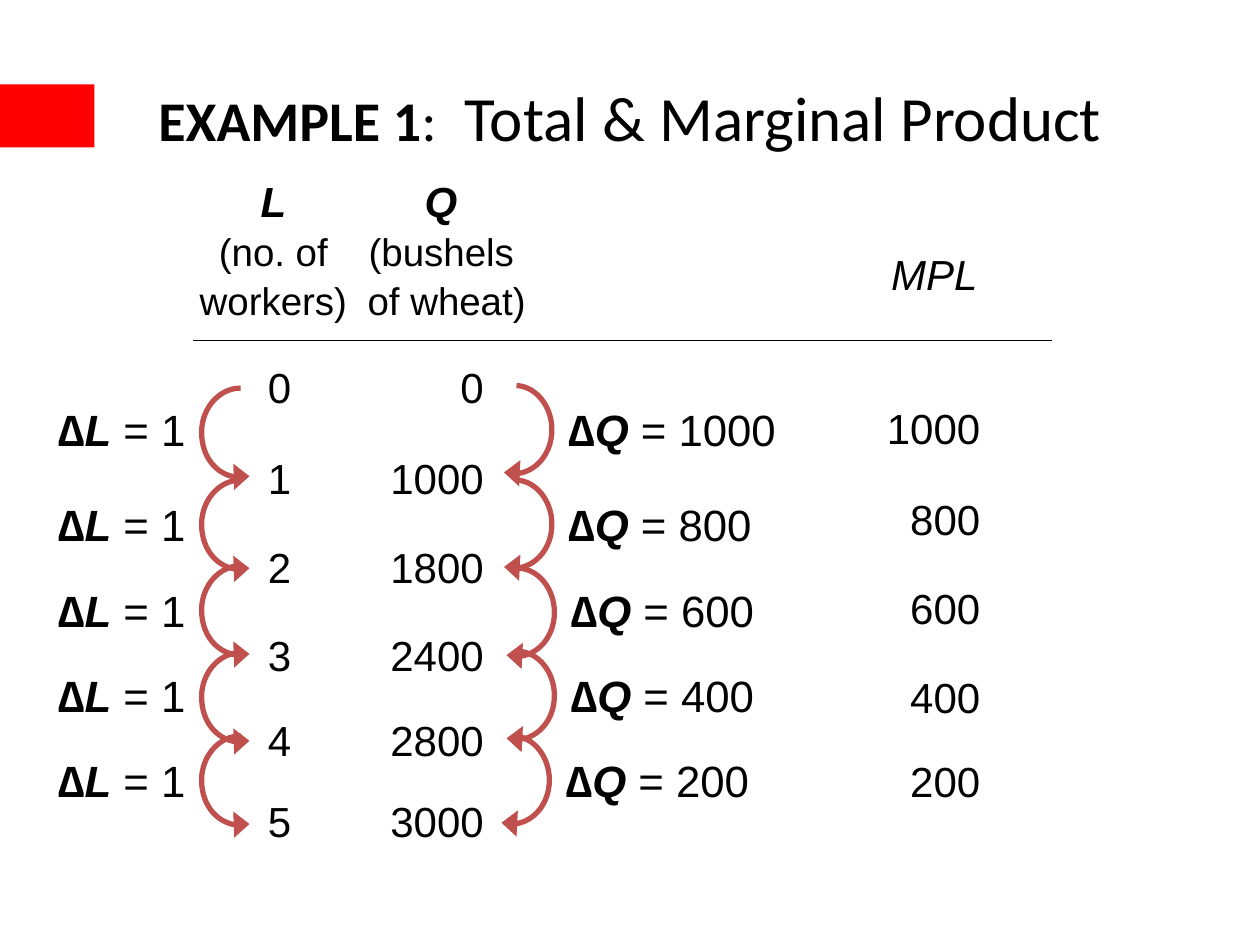
from lxml.etree import SubElement
from pptx import Presentation
from pptx.dml.color import RGBColor
from pptx.enum.shapes import MSO_CONNECTOR, MSO_SHAPE
from pptx.enum.text import MSO_ANCHOR, PP_ALIGN as ALIGN
from pptx.oxml.ns import qn
from pptx.util import Inches, Pt

BLACK, RED, BRICK = "000000", "FF0000", "C0504D"

TITLE = [("EXAMPLE 1", {"size": 32, "bold": True}),
         (":", {"size": 32, "tracking": 8}),
         (" Total & Marginal Product", {"size": 36})]
SYMBOL = {"bold": True, "italic": True}
SMALL = {"size": 22}
HEADERS = [  # runs, left, top, width
    ([("L", SYMBOL), ("\n", {}), ("(no. of workers)", SMALL)], 1.52, 1.25, 1.3),
    ([("Q ", SYMBOL), ("\n", {}), ("(bushels ", SMALL), ("\n", {}),
      ("of wheat)", SMALL)], 2.82, 1.25, 1.45),
    ([("MPL", {"italic": True})], 6.91, 1.44, 1.01),
]
HEADER_HEIGHT = 1.44
WORKERS = [0, 1, 2, 3, 4, 5]
OUTPUT = [0, 1000, 1800, 2400, 2800, 3000]
MARGINAL = [after - before for before, after in zip(OUTPUT, OUTPUT[1:])]

ROW_EDGES = [2.68, 3.43, 4.13, 4.84, 5.54, 6.18, 6.82]
MARGINAL_DROP = 0.33            # marginal values sit between two rows
STEPS = [  # label top, left arc top, right arc top, right arc left
    (3.15, 3.08, 3.06, 4), (3.9, 3.81, 3.81, 4), (4.58, 4.49, 4.51, 4.02),
    (5.26, 5.18, 5.17, 4.02), (5.93, 5.84, 5.84, 3.98)]
LEFT_ARC_X = 1.6
RULES = [(1.53, 4.2, 2.7), (1.88, 8.35, 2.7)]

# Arc start, then curves of two control points and an end, from the top left
LEFT_ARC = [(0.31, 0),
            [(0.14, 0), (0, 0.16), (0, 0.35)],
            [(0, 0.55), (0.14, 0.71), (0.31, 0.71)],
            [(0.33, 0.71), (0.35, 0.7), (0.38, 0.7)]]
RIGHT_ARC = [(0.1, 0),
             [(0.26, 0.01), (0.38, 0.17), (0.38, 0.35)],
             [(0.38, 0.54), (0.24, 0.7), (0.08, 0.7)],
             [(0.05, 0.7), (0.03, 0.7), (0, 0.69)]]


def color(hex_text):
    return RGBColor.from_string(hex_text)


def write(para, runs, size=24, font="Arial"):
    """Fill a paragraph with (text, format) runs; a newline is a line break."""
    for text, style in runs:
        if text == "\n":
            para.add_line_break()
            continue
        span = para.add_run()
        span.text = text
        span.font.name = font
        span.font.size = Pt(style.get("size", size))
        span.font.bold = style.get("bold", False)
        span.font.italic = style.get("italic", False)
        span.font.color.rgb = color(BLACK)
        if "tracking" in style:
            span.font._element.set("spc", str(style["tracking"] * 100))


def add_text(slide, runs, left, top, width, height, align=ALIGN.LEFT, size=24,
             inset=(0.1, 0.1), anchor=MSO_ANCHOR.MIDDLE, spacing=None, wrap=True):
    box = slide.shapes.add_textbox(*map(Inches, (left, top, width, height)))
    frame = box.text_frame
    frame.word_wrap = wrap
    frame.vertical_anchor = anchor
    frame.margin_left, frame.margin_right = map(Inches, inset)
    para = frame.paragraphs[0]
    para.alignment = align
    para.line_spacing = spacing
    write(para, runs, size)


def add_rule(slide, start, end, y):
    rule = slide.shapes.add_connector(
        MSO_CONNECTOR.STRAIGHT, Inches(start), Inches(y), Inches(end), Inches(y))
    rule.line.color.rgb = color(BLACK)
    rule.line.width = Pt(0.75)
    SubElement(rule._element.spPr, qn("a:effectLst"))


def add_arc_arrow(slide, arc_points, left, top):
    """Build the arc from its end points, then bend each segment into a curve."""
    start, *curves = arc_points
    corners = [(Inches(left + x), Inches(top + y))
               for x, y in [start] + [curve[-1] for curve in curves]]
    builder = slide.shapes.build_freeform(*corners[0])
    builder.add_line_segments(corners[1:], close=False)
    arc = builder.convert_to_shape()
    segments = list(arc._element.iter(qn("a:lnTo")))
    for segment, curve in zip(segments, curves):
        segment.tag = qn("a:cubicBezTo")
        segment.clear()
        for x, y in curve:
            SubElement(segment, qn("a:pt"), x=str(Inches(x)), y=str(Inches(y)))
    arc.shadow.inherit = False
    arc.fill.background()
    arc.line.color.rgb = color(BRICK)
    arc.line.width = Pt(3)
    SubElement(arc.line._get_or_add_ln(), qn("a:tailEnd"),
               type="triangle", w="lg", len="med")


def add_column(slide, values, left, width, align, inset, drop=0):
    for value, top, bottom in zip(values, ROW_EDGES, ROW_EDGES[1:]):
        add_text(slide, [(str(value), {})], left, top + drop, width, bottom - top,
                 align=align, inset=inset, spacing=1.05)


def add_change(slide, symbol, value, left, top, width, **style):
    runs = [("∆", {"bold": True}), (symbol, SYMBOL), (f" = {value}", {})]
    add_text(slide, runs, left, top, width, 0.52, size=25,
             anchor=MSO_ANCHOR.TOP, **style)


def main():
    deck = Presentation()
    deck.slide_width, deck.slide_height = Inches(10), Inches(7.5)
    slide = deck.slides.add_slide(deck.slide_layouts[5])

    bar = slide.shapes.add_shape(
        MSO_SHAPE.RECTANGLE, 0, Inches(0.67), Inches(0.75), Inches(0.5))
    bar.shadow.inherit = False
    bar.fill.solid()
    bar.fill.fore_color.rgb = color(RED)
    bar.line.fill.background()

    title = slide.shapes.title
    title.left, title.top, title.width, title.height = map(
        Inches, (0.5, 0.3, 9, 1.25))
    title.text_frame.vertical_anchor = MSO_ANCHOR.MIDDLE
    title.text_frame.paragraphs[0].alignment = ALIGN.CENTER
    write(title.text_frame.paragraphs[0], TITLE, font="Calibri")

    for runs, left, top, width in HEADERS:
        add_text(slide, runs, left, top, width, HEADER_HEIGHT,
                 align=ALIGN.CENTER, inset=(0, 0), spacing=1.05)
    for rule in RULES:
        add_rule(slide, *rule)

    add_column(slide, WORKERS, 1.52, 1.3, ALIGN.CENTER, (0.1, 0))
    add_column(slide, OUTPUT, 2.82, 1.27, ALIGN.RIGHT, (0, 0.25))
    add_column(slide, MARGINAL, 7.02, 1.01, ALIGN.RIGHT, (0, 0.25), MARGINAL_DROP)

    for gain, (label_top, left_top, right_top, right_x) in zip(MARGINAL, STEPS):
        add_arc_arrow(slide, RIGHT_ARC, right_x, right_top)
        add_change(slide, "Q", gain, right_x + 0.41, label_top, 1.85, wrap=False)
        add_arc_arrow(slide, LEFT_ARC, LEFT_ARC_X, left_top)
        add_change(slide, "L", 1, 0.34, label_top, 1.23, align=ALIGN.RIGHT)

    deck.save("out.pptx")


if __name__ == "__main__":
    main()
